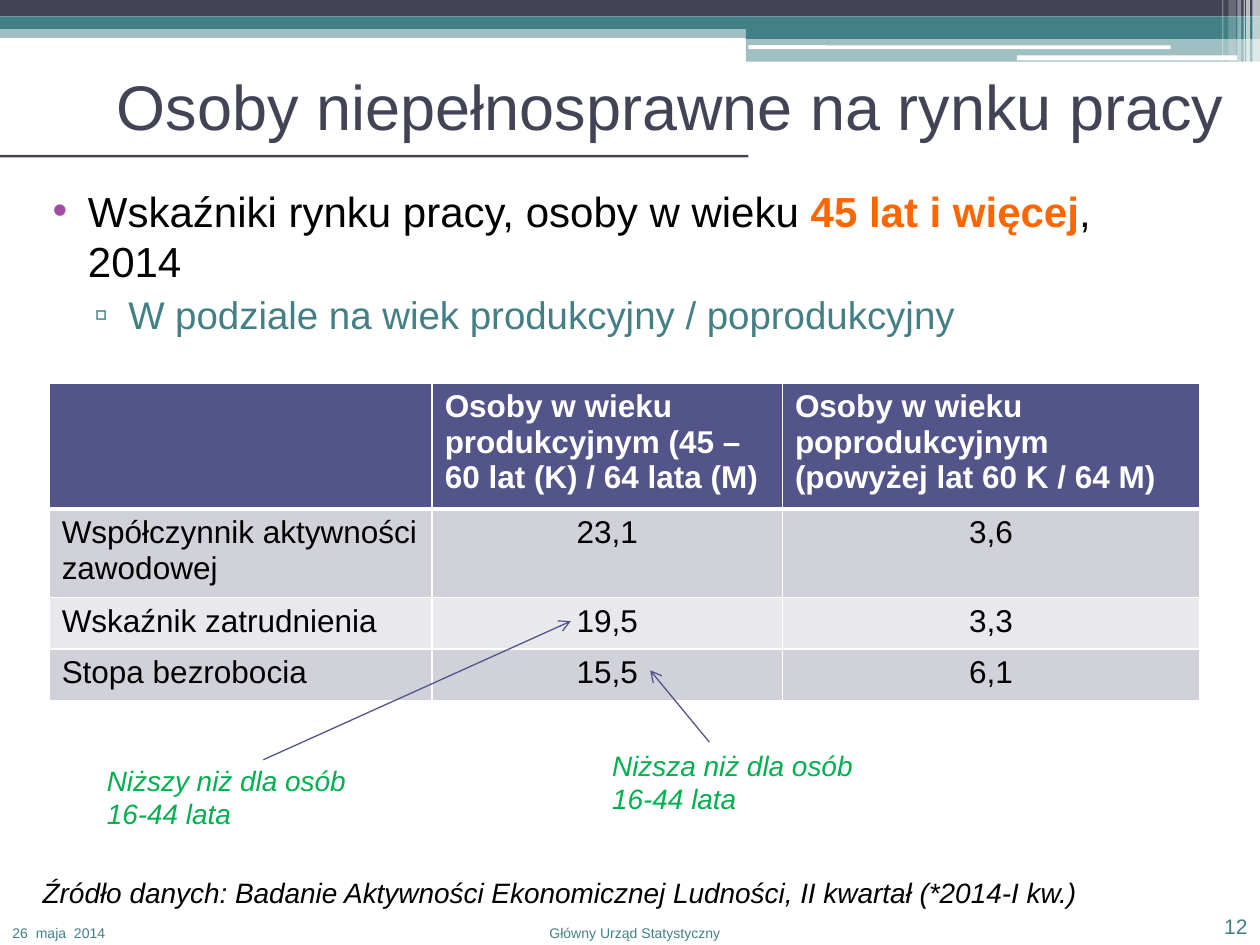
from lxml.etree import SubElement
from pptx import Presentation
from pptx.dml.color import RGBColor
from pptx.enum.shapes import MSO_CONNECTOR, MSO_SHAPE
from pptx.enum.text import MSO_ANCHOR as Anchor, PP_ALIGN as Align
from pptx.oxml.ns import qn
from pptx.util import Inches, Pt

WHITE = RGBColor(0xFF, 0xFF, 0xFF)
BLACK = RGBColor(0, 0, 0)
DARK = RGBColor(0x42, 0x44, 0x56)
TEAL = RGBColor(0x43, 0x80, 0x86)
INDIGO = RGBColor(0x53, 0x54, 0x8A)
ORANGE = RGBColor(0xFF, 0x66, 0x00)
GREEN = RGBColor(0x00, 0xB0, 0x50)
PURPLE = RGBColor(0xA0, 0x4D, 0xA3)
BAND_DARK = RGBColor(0xD1, 0xD1, 0xDA)
BAND_LIGHT = RGBColor(0xE9, 0xE9, 0xED)


def add_color(parent, color, alpha=100):
    element = SubElement(parent, qn("a:srgbClr"), val=str(color))
    if alpha < 100:
        SubElement(element, qn("a:alpha"), val=str(alpha * 1000))


def add_bar(slide, left, top, width, height, color, alpha=100, kind=MSO_SHAPE.RECTANGLE):
    bar = slide.shapes.add_shape(kind, *map(Inches, (left, top, width, height)))
    bar.shadow.inherit = False
    bar.line.fill.background()
    bar.fill.solid()
    bar.fill.fore_color.rgb = color
    if alpha < 100:
        fill = bar.fill._xPr.find(qn("a:solidFill"))
        fill.clear()
        add_color(fill, color, alpha)


def add_run(paragraph, text, **format_values):
    run = paragraph.add_run()
    run.text = text
    values = {"name": "Arial", "size": Pt(18), "color": BLACK, **format_values}
    run.font.color.rgb = values.pop("color")
    for name, value in values.items():
        setattr(run.font, name, value)


def add_text_frame(slide, box, anchor=Anchor.TOP):
    frame = slide.shapes.add_textbox(*map(Inches, box)).text_frame
    frame.word_wrap = True
    frame.vertical_anchor = anchor
    return frame


def add_label(slide, box, text, size, color, align=Align.LEFT, anchor=Anchor.TOP, italic=False):
    paragraph = add_text_frame(slide, box, anchor).paragraphs[0]
    paragraph.alignment = align
    add_run(paragraph, text, size=Pt(size), color=color, italic=italic)
    return paragraph


def set_indent(paragraph, left, first=0):
    properties = paragraph._p.get_or_add_pPr()
    properties.set("marL", str(Inches(left)))
    properties.set("indent", str(Inches(first)))
    return properties


def add_bullet(paragraph, left, first, symbol, color):
    properties = set_indent(paragraph, left, first)
    add_color(SubElement(properties, qn("a:buClr")), color)
    SubElement(properties, qn("a:buFont"), typeface="Arial")
    SubElement(properties, qn("a:buChar"), char=symbol)


def add_header_band(slide, left, top, width):
    split, right = left + 5.92, left + width
    # Full-width stripes, then the deeper block on the right
    add_bar(slide, left, top + 0.21, width, 0.09, TEAL, 50)
    add_bar(slide, left, top, width, 0.13, DARK)
    add_bar(slide, left, top + 0.13, width, 0.1, TEAL)
    add_bar(slide, split, top + 0.21, right - split, 0.1, TEAL)
    add_bar(slide, split, top + 0.29, right - split, 0.2, TEAL, 50)
    # White dashes
    for x, y, length, height in ((5.94, 0.36, 3.35, 0.03), (8.07, 0.44, 1.75, 0.04)):
        add_bar(slide, left + x, top + y, length, height, WHITE, kind=MSO_SHAPE.ROUNDED_RECTANGLE)
    # Translucent vertical strips at the right edge
    strips = ((0.06, 0.06, 0.68, 65), (0.11, 0.03, 0.68, 65), (0.13, 0.01, 0.68, 60),
              (0.18, 0.03, 0.68, 40), (0.25, 0.06, 0.64, 20), (0.3, 0.01, 0.64, 30))
    for offset, thickness, height, alpha in strips:
        add_bar(slide, right - offset, top, thickness, height, WHITE, alpha)
    # Rule under the title
    add_bar(slide, left, top + 1.23, 5.94, 0.02, DARK)


def add_body(slide, box):
    frame = add_text_frame(slide, box)
    frame.margin_top = Inches(0.08)
    topic = frame.paragraphs[0]
    add_bullet(topic, 0.4, -0.28, "•", PURPLE)
    add_run(topic, "Wskaźniki rynku pracy, osoby w wieku ", size=Pt(24))
    add_run(topic, "45 lat i więcej", size=Pt(24), color=ORANGE, bold=True)
    add_run(topic, ", ", size=Pt(24))
    topic.add_line_break()
    add_run(topic, "2014", size=Pt(24))
    detail = frame.add_paragraph()
    detail.level = 1
    add_bullet(detail, 0.72, -0.27, "▫", TEAL)
    detail.space_before = Pt(3)
    add_run(detail, "W podziale na wiek produkcyjny / poprodukcyjny", size=Pt(22), color=TEAL)


def set_borders(cell, is_header, is_below_header):
    properties = cell._tc.get_or_add_tcPr()
    widths = {"L": 1, "R": 1, "T": 3 if is_below_header else 1, "B": 3 if is_header else 1}
    for side, width in widths.items():
        line = SubElement(properties, qn(f"a:ln{side}"), w=str(Pt(width)))
        add_color(SubElement(line, qn("a:solidFill")), WHITE)


def add_indicator_table(slide, left, top):
    rows = (
        ("", "Osoby w wieku produkcyjnym (45 – 60 lat (K) / 64 lata (M)",
         "Osoby w wieku poprodukcyjnym (powyżej lat 60 K / 64 M)"),
        ("Współczynnik aktywności zawodowej", "23,1", "3,6"),
        ("Wskaźnik zatrudnienia", "19,5", "3,3"),
        ("Stopa bezrobocia", "15,5", "6,1"),
    )
    widths, heights = (3.04, 2.78, 3.31), (0.93, 0.66, 0.41, 0.41)
    table = slide.shapes.add_table(
        len(rows), len(widths), Inches(left), Inches(top),
        Inches(sum(widths)), Inches(sum(heights))).table
    for column, width in zip(table.columns, widths):
        column.width = Inches(width)
    for row_index, (texts, height) in enumerate(zip(rows, heights)):
        table.rows[row_index].height = Inches(height)
        is_header = row_index == 0
        band = BAND_DARK if row_index % 2 else BAND_LIGHT
        for column_index, text in enumerate(texts):
            cell = table.cell(row_index, column_index)
            set_borders(cell, is_header, row_index == 1)
            cell.fill.solid()
            cell.fill.fore_color.rgb = INDIGO if is_header else band
            paragraph = cell.text_frame.paragraphs[0]
            if column_index and not is_header:
                paragraph.alignment = Align.CENTER
            if text:
                add_run(paragraph, text, color=WHITE if is_header else BLACK, bold=is_header)


def add_callout(slide, box, text, start, end):
    arrow = slide.shapes.add_connector(MSO_CONNECTOR.STRAIGHT, *map(Inches, start + end))
    arrow.line.color.rgb = INDIGO
    arrow.line.width = Pt(0.75)
    SubElement(arrow.line._get_or_add_ln(), qn("a:tailEnd"), type="arrow")
    SubElement(arrow._element.spPr, qn("a:effectLst"))
    add_label(slide, box, text, 16, GREEN, italic=True)


def add_footer(slide):
    source = add_label(
        slide, (0.12, 6.9, 9.69, 0.47),
        "Źródło danych: Badanie Aktywności Ekonomicznej Ludności, II kwartał (*2014-I kw.)",
        16, BLACK, italic=True)
    set_indent(source, 0.12)
    add_label(slide, (0, 7.29, 1.06, 0.21), "26  maja  2014", 8, TEAL)
    add_label(slide, (3.82, 7.29, 2.44, 0.21), "Główny Urząd Statystyczny", 8, TEAL, Align.CENTER)
    add_label(slide, (9.17, 7.21, 0.83, 0.29), "12", 12, TEAL, Align.RIGHT, Anchor.BOTTOM)


def main():
    presentation = Presentation()
    presentation.slide_width, presentation.slide_height = Inches(10), Inches(7.5)
    slide = presentation.slides.add_slide(presentation.slide_layouts[6])
    add_header_band(slide, 0, 0, 10)
    add_label(slide, (0.83, 0.52, 9.06, 0.63), "Osoby niepełnosprawne na rynku pracy",
              36, DARK, anchor=Anchor.MIDDLE)
    add_body(slide, (0.2, 1.39, 9, 1.34))
    add_footer(slide)
    add_indicator_table(slide, 0.39, 3.04)
    add_callout(slide, (0.75, 6.01, 2.2, 0.64), "Niższy niż dla osób 16-44 lata",
                (2.09, 6.03), (4.53, 4.93))
    add_callout(slide, (4.76, 5.89, 2.12, 0.64), "Niższa niż dla osób 16-44 lata",
                (5.63, 5.89), (5.16, 5.32))
    presentation.save("out.pptx")


if __name__ == "__main__":
    main()
